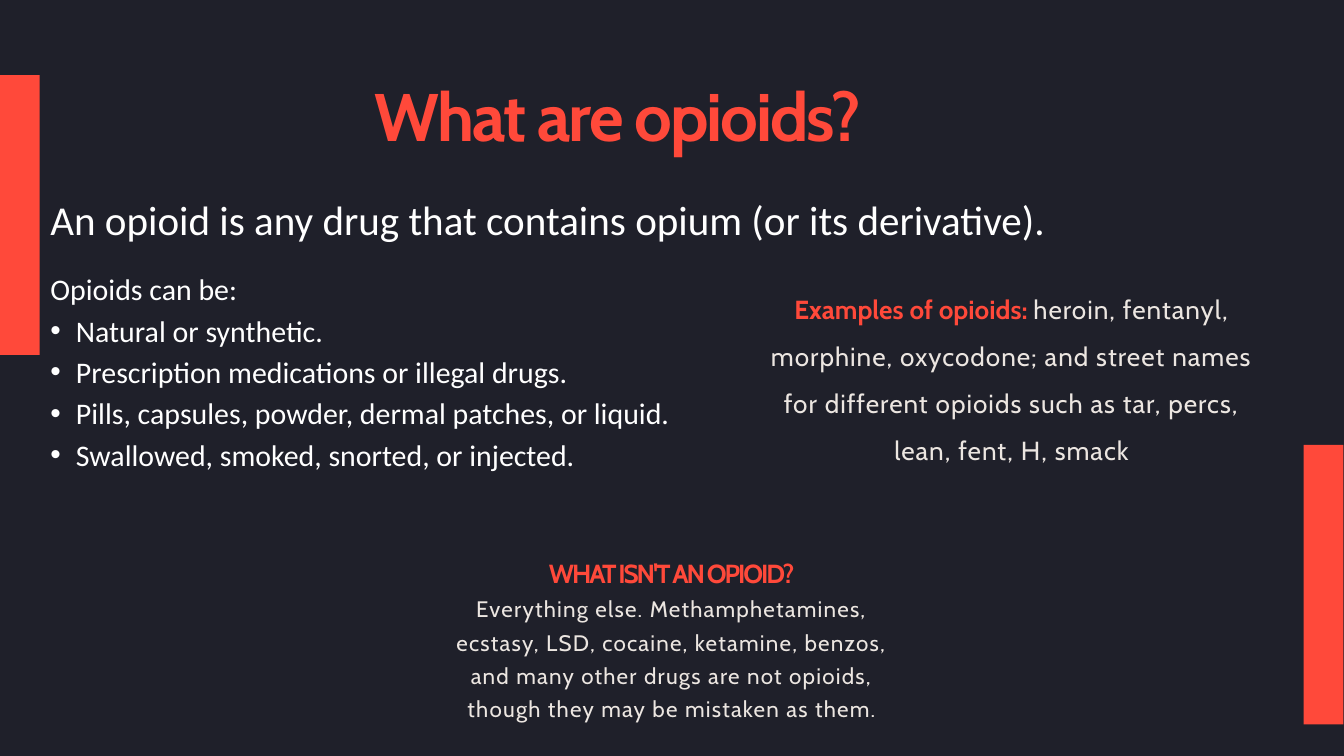
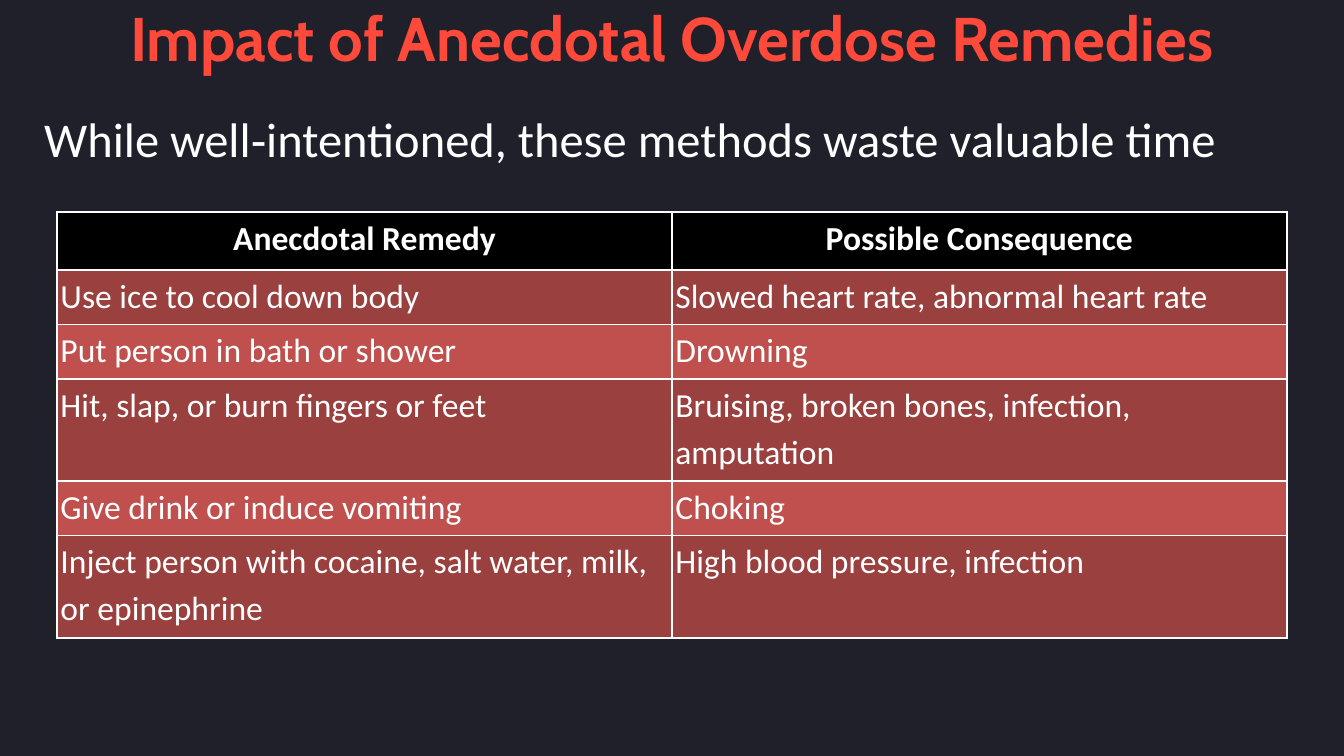
from lxml.etree import SubElement
from pptx import Presentation
from pptx.dml.color import RGBColor
from pptx.enum.shapes import MSO_SHAPE as Preset
from pptx.enum.text import PP_ALIGN as Align
from pptx.oxml.ns import qn
from pptx.util import Inches, Pt

WIDTH, HEIGHT = 20, 11.25
COLORS = {"night": "1F202A", "coral": "FF493A", "cream": "ECE6E1", "white": "FFFFFF",
          "black": "000000", "dark_red": "9A403E", "light_red": "C0504D"}
NO_INSETS = (0, 0, 0, 0)
BODY_INSETS = (0, 0.01, 0, 0)

# Run styles: font attributes, plus color and letter spacing in points
TITLE = {"name": "Cabin", "size": 72, "bold": True, "color": "coral", "spacing": -2.2}
TABLE_TITLE = TITLE | {"size": 66, "spacing": 0}
HEADING = TITLE | {"size": 28}
LABEL = HEADING | {"spacing": 0}
EXAMPLES = {"name": "Cabin", "size": 28, "color": "cream", "spacing": 1.1}
DETAIL = EXAMPLES | {"size": 24, "spacing": 1.3}
LEAD = {"name": "Calibri", "size": 44, "color": "white"}
SUBTITLE = LEAD | {"size": 52}
LIST = LEAD | {"size": 32}
CELL = LEAD | {"size": 36}
CELL_HEADER = CELL | {"bold": True}

# Paragraph formats
CENTERED = {"alignment": Align.CENTER}
LIST_FORMAT = {"space_after": Pt(6)}

SIDE_BARS = [(0, 1.12), (19.4, 6.62)]
BAR_SIZE = (0.59, 4.16)

DEFINITION = "An opioid is any drug that contains opium (or its derivative)."
FORMS = ["Natural or synthetic.", "Prescription medications or illegal drugs.",
         "Pills, capsules, powder, dermal patches, or liquid.",
         "Swallowed, smoked, snorted, or injected."]
EXAMPLE_LIST = ("heroin, fentanyl, morphine, oxycodone; and street names for different "
                "opioids such as tar, percs, lean, fent, H, smack")
NOT_OPIOIDS = ("Everything else. Methamphetamines, ecstasy, LSD, cocaine, ketamine, benzos, "
               "and many other drugs are not opioids, though they may be mistaken as them.")

REMEDIES = [
    ("Anecdotal Remedy", "Possible Consequence"),
    ("Use ice to cool down body", "Slowed heart rate, abnormal heart rate"),
    ("Put person in bath or shower", "Drowning"),
    ("Hit, slap, or burn fingers or feet", "Bruising, broken bones, infection, amputation"),
    ("Give drink or induce vomiting", "Choking"),
    ("Inject person with cocaine, salt water, milk, or epinephrine",
     "High blood pressure, infection"),
]
ROW_HEIGHTS = [0.87, 0.81, 0.81, 1.52, 0.81, 1.52]
TABLE_LEFT, TABLE_TOP = 0.85, 3.15


def rgb(name):
    return RGBColor.from_string(COLORS[name])


def paint(target, color):
    target.fill.solid()
    target.fill.fore_color.rgb = rgb(color)


def set_margins(target, insets):
    for side, inset in zip(("left", "top", "right", "bottom"), insets):
        setattr(target, f"margin_{side}", Inches(inset))


def add_run(paragraph, text, style):
    run = paragraph.add_run()
    run.text = text
    for name, value in style.items():
        if name == "color":
            run.font.color.rgb = rgb(value)
        elif name == "spacing":
            run._r.get_or_add_rPr().set("spc", str(round(value * 100)))
        else:
            setattr(run.font, name, Pt(value) if name == "size" else value)


def fill_paragraph(paragraph, runs, formats, bullet=False):
    """Write (text, style) runs into a paragraph, with a hanging bullet if asked."""
    for name, value in formats.items():
        setattr(paragraph, name, value)
    if bullet:
        properties = paragraph._p.get_or_add_pPr()
        indent = Inches(0.38)
        properties.set("marL", str(indent))
        properties.set("indent", str(-indent))
        SubElement(properties, qn("a:buFont")).set("typeface", "Arial")
        SubElement(properties, qn("a:buChar")).set("char", "•")
    for text, style in runs:
        add_run(paragraph, text, style)


def add_text(slide, box, paragraphs, insets=NO_INSETS):
    """Add a text box from (runs, formats[, bullet]) paragraphs."""
    frame = slide.shapes.add_textbox(*map(Inches, box)).text_frame
    frame.word_wrap = True
    set_margins(frame, insets)
    for index, content in enumerate(paragraphs):
        paragraph = frame.add_paragraph() if index else frame.paragraphs[0]
        fill_paragraph(paragraph, *content)


def add_slide(presentation):
    slide = presentation.slides.add_slide(presentation.slide_layouts[6])
    paint(slide.background, "night")
    return slide


def add_borders(cell):
    """Draw white lines on all sides; they must precede the fill."""
    properties = cell._tc.get_or_add_tcPr()
    for side in ("lnL", "lnR", "lnT", "lnB"):
        line = SubElement(properties, qn(f"a:{side}"), w=str(Pt(2.25)))
        solid = SubElement(line, qn("a:solidFill"))
        SubElement(solid, qn("a:srgbClr")).set("val", COLORS["white"])


def add_remedy_table(slide):
    table_width = WIDTH - 2 * TABLE_LEFT
    box = (TABLE_LEFT, TABLE_TOP, table_width, sum(ROW_HEIGHTS))
    table = slide.shapes.add_table(len(REMEDIES), 2, *map(Inches, box)).table
    for column in table.columns:
        column.width = Inches(table_width / 2)
    for row_index, texts in enumerate(REMEDIES):
        table.rows[row_index].height = Inches(ROW_HEIGHTS[row_index])
        if row_index == 0:
            color, style, formats = "black", CELL_HEADER, CENTERED
            insets = (0.2, 0.1, 0.2, 0.1)
        else:
            color = "dark_red" if row_index % 2 else "light_red"
            style, formats, insets = CELL, {"line_spacing": 1.15}, (0.05, 0, 0, 0)
        for column_index, text in enumerate(texts):
            cell = table.cell(row_index, column_index)
            set_margins(cell, insets)
            add_borders(cell)
            paint(cell, color)
            fill_paragraph(cell.text_frame.paragraphs[0], [(text, style)], formats)


def build_definition_slide(presentation):
    slide = add_slide(presentation)
    add_text(slide, (5.58, 1.09, 8.83, 1.23), [([("What are opioids?", TITLE)], {})],
             (0, 0.02, 0, 0))
    for position in SIDE_BARS:
        bar = slide.shapes.add_shape(Preset.RECTANGLE, *map(Inches, position + BAR_SIZE))
        bar.shadow.inherit = False
        paint(bar, "coral")
        bar.line.fill.background()
    add_text(slide, (6.46, 8.15, 7.07, 2.61), [
        ([("WHAT ISN'T AN OPIOID?", HEADING)], CENTERED),
        ([(NOT_OPIOIDS, DETAIL)], CENTERED | {"line_spacing": 1.24, "space_before": Pt(0.6)}),
    ], (0, 0.14, 0, 0))
    add_text(slide, (0.75, 2.81, 15.88, 4.26), [
        ([(DEFINITION, LEAD)], {"line_spacing": 1.1, "space_after": Pt(29)}),
        ([("Opioids can be:", LIST)], LIST_FORMAT),
        *[([(form, LIST)], LIST_FORMAT, True) for form in FORMS],
    ], BODY_INSETS)
    add_text(slide, (11.42, 4.12, 7.27, 2.76), [
        ([("Examples of opioids: ", LABEL), (EXAMPLE_LIST, EXAMPLES)],
         CENTERED | {"line_spacing": 1.5}),
    ], BODY_INSETS)


def build_remedies_slide(presentation):
    slide = add_slide(presentation)
    add_text(slide, (0.34, 0, 19.31, 1.57),
             [([("Impact of Anecdotal Overdose Remedies", TABLE_TITLE)], CENTERED)])
    add_remedy_table(slide)
    add_text(slide, (0.56, 1.57, 19.44, 0.98),
             [([("While well‐intentioned, these methods waste valuable time", SUBTITLE)], {})],
             (0.1, 0.05, 0.1, 0.05))


def main():
    presentation = Presentation()
    presentation.slide_width, presentation.slide_height = Inches(WIDTH), Inches(HEIGHT)
    build_definition_slide(presentation)
    build_remedies_slide(presentation)
    presentation.save("out.pptx")


if __name__ == "__main__":
    main()
